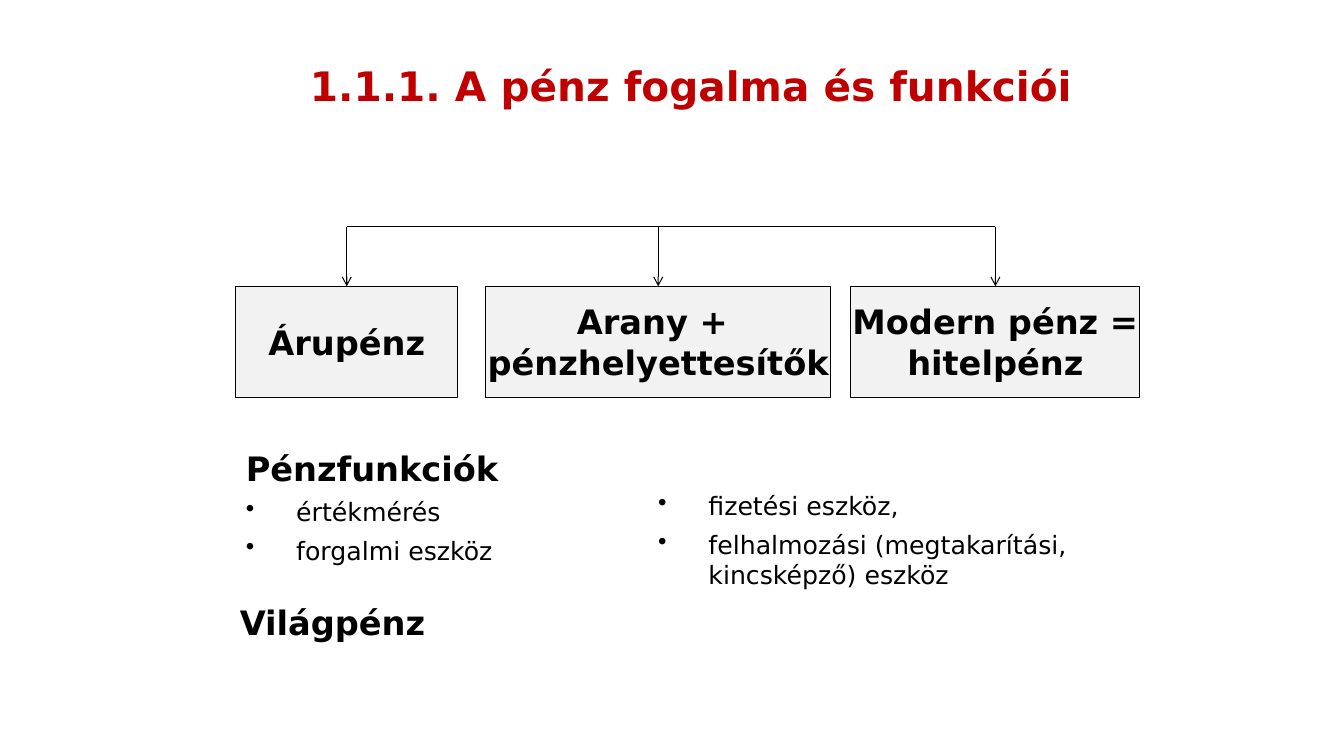
"""Build the slide on the concept and functions of money."""
import dataclasses
import typing

import pptx
import pptx.dml.color
import pptx.enum.shapes
import pptx.enum.text
import pptx.oxml
import pptx.oxml.ns
import pptx.util

RED = pptx.dml.color.RGBColor(0xC0, 0x00, 0x00)
BLACK = pptx.dml.color.RGBColor(0x00, 0x00, 0x00)
PALE_GREY = pptx.dml.color.RGBColor(0xF2, 0xF2, 0xF2)
FONT_NAME = "DejaVu Sans"
WIDTH, HEIGHT = pptx.util.Inches(13.33), pptx.util.Inches(7.5)
COLUMNS, ROWS = 40, 30
BUS_ROW, BOX_ROW, BOX_ROWS = 9, 11.36, 4.4
INDENT = pptx.util.Inches(0.5)
LINE_WIDTH = pptx.util.Pt(0.75)
ALIGN = pptx.enum.text.PP_ALIGN
ANCHOR = pptx.enum.text.MSO_ANCHOR
TITLE_FONT = {"size": pptx.util.Pt(29), "bold": True, "name": FONT_NAME}
HEADING_FONT = {"size": pptx.util.Pt(24), "bold": True, "name": FONT_NAME}
BODY_FONT = {"size": pptx.util.Pt(18), "bold": False, "name": FONT_NAME}


@dataclasses.dataclass(frozen=True)
class Area:
    """A rectangle in grid columns and rows."""

    column: float
    row: float
    columns: float
    rows: float


@dataclasses.dataclass(frozen=True)
class Line:
    """One paragraph of text."""

    text: str
    bullet: bool = False
    align: ALIGN = ALIGN.JUSTIFY


@dataclasses.dataclass(frozen=True)
class MoneyType:
    """A box naming one form of money."""

    column: float
    columns: float
    lines: tuple[str, ...]

    @property
    def center(self) -> float:
        """Return the column of the middle of the box."""
        return self.column + self.columns / 2


@dataclasses.dataclass(frozen=True)
class TextBlock:
    """A free text box with its paragraphs."""

    area: Area
    lines: tuple[Line, ...]


TITLE_AREA = Area(5.82, 0, 29.52, 4.56)
MONEY_TYPES = (
    MoneyType(7.02, 6.6, ("Árupénz",)),
    MoneyType(14.46, 10.26, ("Arany + ", "pénzhelyettesítők")),
    MoneyType(25.32, 8.61, ("Modern pénz =", "hitelpénz")),
)
TEXT_BLOCKS = (
    TextBlock(Area(7.02, 17.56, 13.59, 12.64), (
        Line("Pénzfunkciók"),
        Line("értékmérés", True),
        Line("forgalmi eszköz", True),
    )),
    TextBlock(Area(19.29, 19.28, 14.07, 12.64), (
        Line("fizetési eszköz,", True),
        Line("felhalmozási (megtakarítási, kincsképző) eszköz", True, ALIGN.LEFT),
    )),
    TextBlock(Area(6.84, 23.68, 13.59, 2.44), (Line("Világpénz"),)),
)


def across(columns: float) -> int:
    """Convert columns to a length."""
    return round(WIDTH * columns / COLUMNS)


def down(rows: float) -> int:
    """Convert rows to a length."""
    return round(HEIGHT * rows / ROWS)


def bounds(area: Area) -> tuple[int, int, int, int]:
    """Return left, top, width and height of an area."""
    return across(area.column), down(area.row), across(area.columns), down(area.rows)


def apply_format(target: typing.Any, values: dict[str, typing.Any]) -> None:
    """Set every attribute given in the format values."""
    for name, value in values.items():
        setattr(target, name, value)


def append_element(parent: typing.Any, tag: str, **attributes: str) -> None:
    """Append a drawing element to its parent."""
    element = pptx.oxml.parse_xml(f"<{tag} {pptx.oxml.ns.nsdecls('a')}/>")
    for name, value in attributes.items():
        element.set(name, value)
    parent.append(element)


def write_lines(frame: typing.Any, lines: tuple[Line, ...]) -> None:
    """Fill a text frame with headings and bullets."""
    for index, line in enumerate(lines):
        paragraph = frame.add_paragraph() if index else frame.paragraphs[0]
        paragraph.alignment = line.align
        if index and line.align != ALIGN.CENTER:
            paragraph.space_before = pptx.util.Pt(6)
        if line.bullet:
            properties = paragraph._p.get_or_add_pPr()
            properties.set("marL", str(INDENT))
            properties.set("indent", str(-INDENT))
            append_element(properties, "a:buChar", char="•")
        paragraph.text = line.text
        apply_format(paragraph.font, BODY_FONT if line.bullet else HEADING_FONT)
        paragraph.font.color.rgb = BLACK


def add_title(slide: typing.Any, text: str) -> None:
    """Place and format the title placeholder."""
    title = slide.shapes.title
    apply_format(title, dict(zip(("left", "top", "width", "height"), bounds(TITLE_AREA))))
    title.text_frame.text = text
    apply_format(title.text_frame, {
        "vertical_anchor": ANCHOR.BOTTOM, "word_wrap": True,
        "auto_size": pptx.enum.text.MSO_AUTO_SIZE.NONE})
    paragraph = title.text_frame.paragraphs[0]
    apply_format(paragraph, {"alignment": ALIGN.CENTER, "line_spacing": 0.9})
    apply_format(paragraph.font, TITLE_FONT)
    paragraph.font.color.rgb = RED


def add_line(slide: typing.Any, start: tuple[float, float],
             end: tuple[float, float], arrow: bool = False) -> None:
    """Draw a thin line between two grid points."""
    connector = slide.shapes.add_connector(
        pptx.enum.shapes.MSO_CONNECTOR.STRAIGHT,
        across(start[0]), down(start[1]), across(end[0]), down(end[1]))
    connector.line.color.rgb = BLACK
    connector.line.width = LINE_WIDTH
    if arrow:
        append_element(connector.line._get_or_add_ln(), "a:tailEnd", type="arrow")
    append_element(connector._element.spPr, "a:effectLst")


def add_money_box(slide: typing.Any, money: MoneyType) -> None:
    """Draw the box of one form of money."""
    area = Area(money.column, BOX_ROW, money.columns, BOX_ROWS)
    shape = slide.shapes.add_shape(pptx.enum.shapes.MSO_SHAPE.RECTANGLE, *bounds(area))
    shape.shadow.inherit = False
    shape.fill.solid()
    shape.fill.fore_color.rgb = PALE_GREY
    shape.line.color.rgb = BLACK
    shape.line.width = LINE_WIDTH
    apply_format(shape.text_frame, {"vertical_anchor": ANCHOR.MIDDLE, "word_wrap": False})
    write_lines(shape.text_frame,
                tuple(Line(text, align=ALIGN.CENTER) for text in money.lines))


def add_text_block(slide: typing.Any, block: TextBlock) -> None:
    """Add a wrapped text box."""
    frame = slide.shapes.add_textbox(*bounds(block.area)).text_frame
    frame.word_wrap = True
    write_lines(frame, block.lines)


def main() -> None:
    """Build and save the presentation."""
    presentation = pptx.Presentation()
    apply_format(presentation, {"slide_width": WIDTH, "slide_height": HEIGHT})
    slide = presentation.slides.add_slide(presentation.slide_layouts.get_by_name("Title Only"))
    add_title(slide, "1.1.1. A pénz fogalma és funkciói")
    add_line(slide, (MONEY_TYPES[0].center, BUS_ROW), (MONEY_TYPES[-1].center, BUS_ROW))
    for money in MONEY_TYPES:
        add_line(slide, (money.center, BUS_ROW), (money.center, BOX_ROW), arrow=True)
        add_money_box(slide, money)
    for block in TEXT_BLOCKS:
        add_text_block(slide, block)
    presentation.save("out.pptx")


if __name__ == "__main__":
    main()
